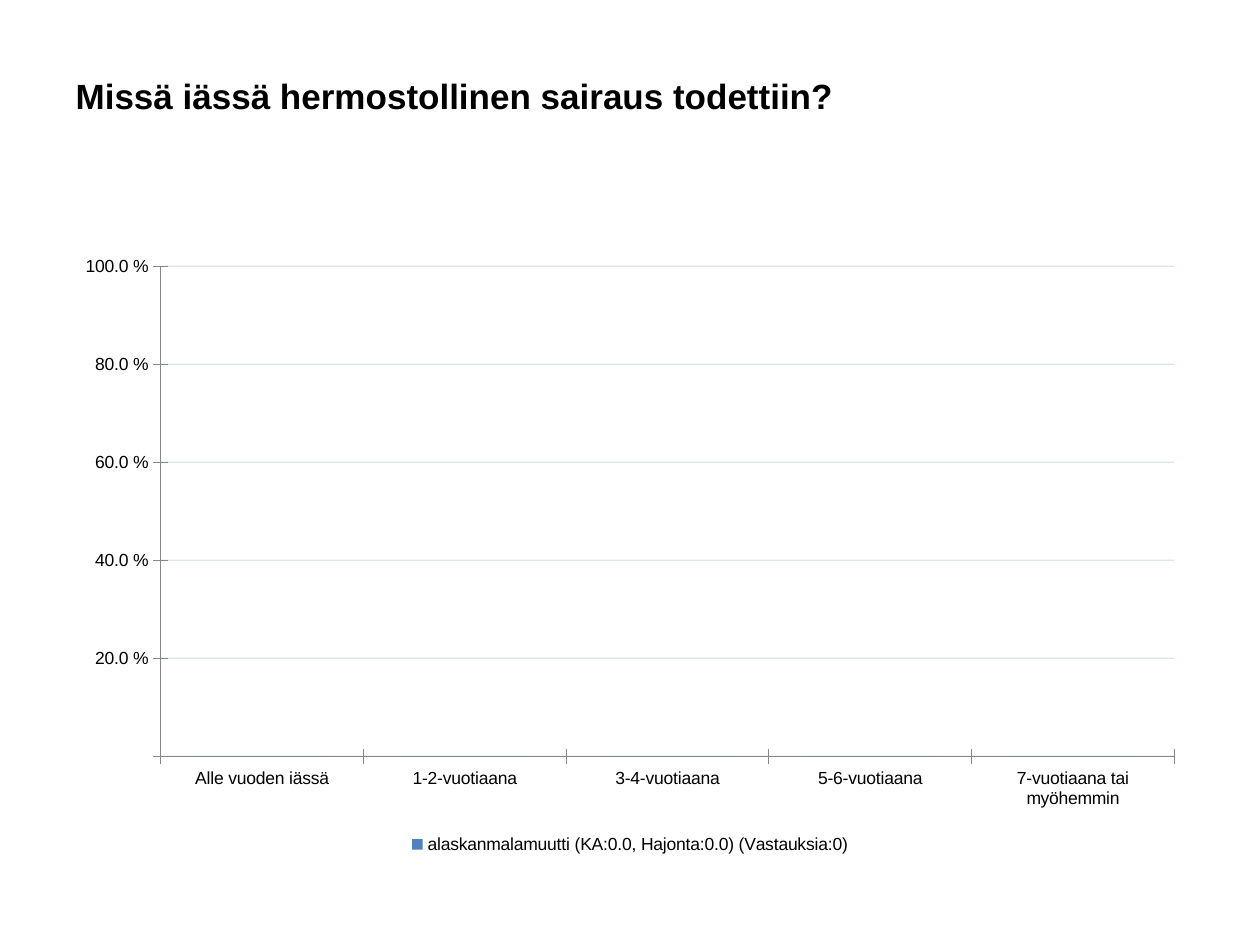
from dataclasses import dataclass

from lxml.etree import SubElement
from pptx import Presentation
from pptx.chart.data import CategoryChartData
from pptx.dml.color import RGBColor
from pptx.enum.chart import XL_CHART_TYPE as ChartType
from pptx.enum.chart import XL_LEGEND_POSITION as LegendPosition
from pptx.enum.chart import XL_TICK_MARK as TickMark
from pptx.enum.text import MSO_ANCHOR as Anchor
from pptx.enum.text import PP_ALIGN as Align
from pptx.oxml.ns import qn
from pptx.util import Pt


@dataclass(frozen=True)
class Theme:
    font: str = "Arial"
    title_size: int = 20
    chart_size: int = 10
    text: RGBColor = RGBColor(0x00, 0x00, 0x00)
    bar: RGBColor = RGBColor(0x4F, 0x81, 0xBD)
    axis: RGBColor = RGBColor(0x87, 0x87, 0x87)


theme = Theme()
PERCENT = r"0.0\ %;;;"  # the empty sections hide zeros


def style_font(font, size, bold=False):
    font.name = theme.font
    font.size = Pt(size)
    font.bold = bold
    font.color.rgb = theme.text


presentation = Presentation()
presentation.slide_width = Pt(720)
presentation.slide_height = Pt(540)
slide = presentation.slides.add_slide(presentation.slide_layouts[5])

# Question
question = slide.shapes.title
question.left, question.top = Pt(36), Pt(26)
question.width, question.height = Pt(648), Pt(57)
question.text_frame.vertical_anchor = Anchor.MIDDLE
question.text_frame.word_wrap = True
paragraph = question.text_frame.paragraphs[0]
paragraph.alignment = Align.LEFT
run = paragraph.add_run()
run.text = "Missä iässä hermostollinen sairaus todettiin?"
style_font(run.font, theme.title_size, bold=True)

# Share of answers by age at diagnosis
answers = CategoryChartData(number_format=PERCENT)
answers.categories = [
    "Alle vuoden iässä",
    "1-2-vuotiaana",
    "3-4-vuotiaana",
    "5-6-vuotiaana",
    "7-vuotiaana tai myöhemmin",
]
answers.add_series(
    "alaskanmalamuutti (KA:0.0, Hajonta:0.0) (Vastauksia:0)", [0] * 5
)
chart = slide.shapes.add_chart(
    ChartType.COLUMN_CLUSTERED, Pt(36), Pt(139.5), Pt(648), Pt(351.5), answers
).chart
chart.has_title = False
style_font(chart.font, theme.chart_size)

chart.has_legend = True
chart.legend.position = LegendPosition.BOTTOM
chart.legend.include_in_layout = False
style_font(chart.legend.font, theme.chart_size)

for axis in (chart.category_axis, chart.value_axis):
    axis.major_tick_mark = TickMark.CROSS
    axis.minor_tick_mark = TickMark.NONE
    axis.format.line.color.rgb = theme.axis
    axis.format.line.width = Pt(0.75)
    axis.tick_labels.number_format = PERCENT
    axis.tick_labels.number_format_is_linked = False
    style_font(axis.tick_labels.font, theme.chart_size)

shares = chart.value_axis
shares.minimum_scale = 0
shares.maximum_scale = 1
shares.major_unit = 0.2
shares.has_major_gridlines = True
grid_line = shares.major_gridlines.format.line
grid_line.color.rgb = theme.bar
grid_line.width = Pt(0.75)
grid_color = next(shares.major_gridlines._xAx.iter(qn("c:majorGridlines"))).find(
    ".//" + qn("a:srgbClr")
)
SubElement(grid_color, qn("a:alpha"), val="20000")

columns = chart.plots[0]
columns.gap_width = 58
columns.vary_by_categories = False
breed = columns.series[0]
breed.format.fill.solid()
breed.format.fill.fore_color.rgb = theme.bar
labels = breed.data_labels
labels.show_value = True
labels.number_format = PERCENT
labels.number_format_is_linked = False
style_font(labels.font, theme.chart_size)

presentation.save("out.pptx")
